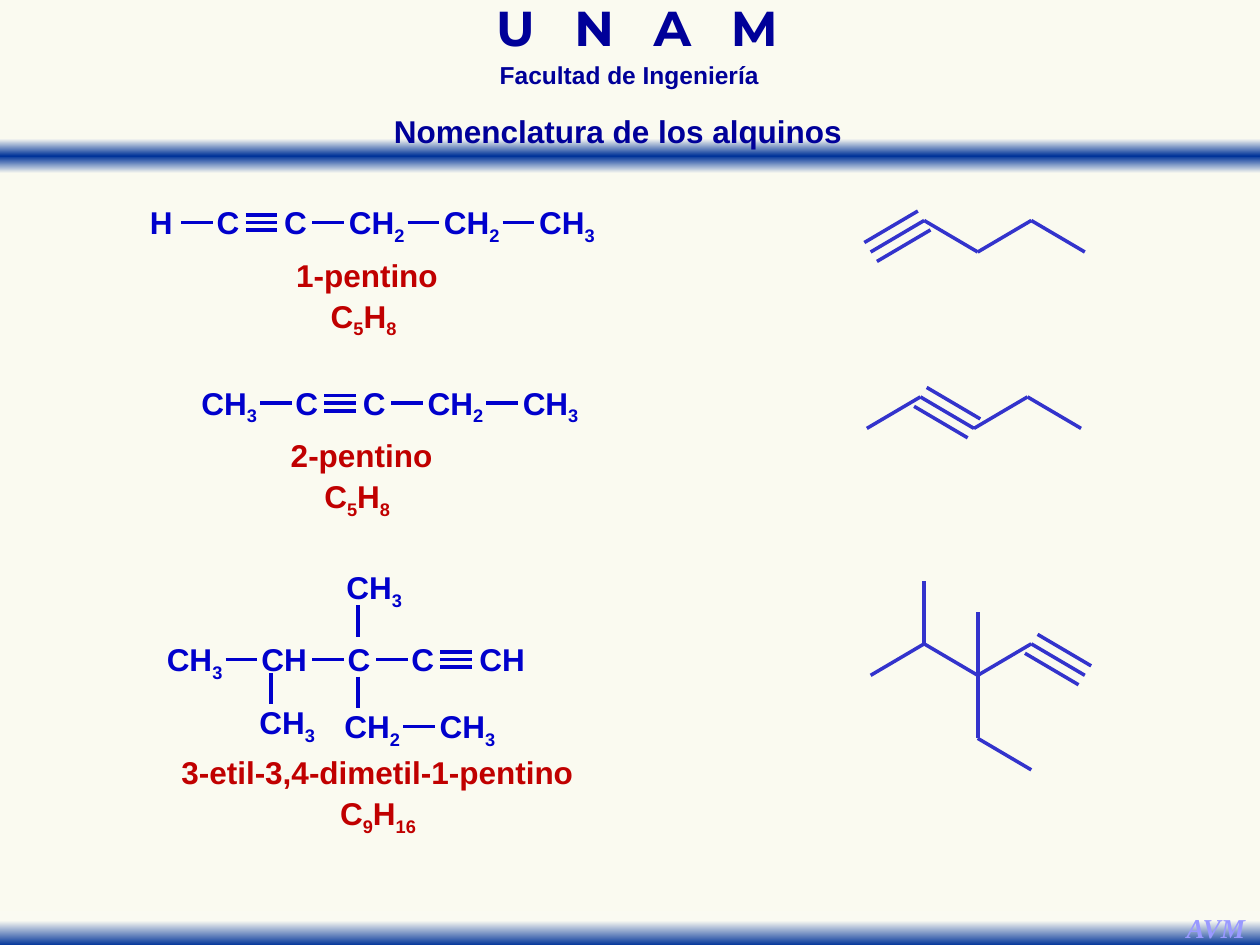
from itertools import groupby

from lxml import etree
from pptx import Presentation
from pptx import util as u
from pptx.dml.color import RGBColor
from pptx.enum import shapes, text
from pptx.oxml.ns import qn

CELL = 0.25
COLUMNS, ROWS = 40, 30
CREAM, BAND, NAVY, RED, BLUE, VIOLET, LILAC = (
    "FAFAF2", "003399", "000099", "C00000", "0000CC", "3333CC", "9999FF")
ATOM_WIDTH = {"H": 1.52, "C": 1.52, "CH": 2.28, "CH2": 2.64, "CH3": 2.64}
ATOM_PITCH = {"H": 2.12, "C": 2.02, "CH": 2.76, "CH2": 3.02, "CH3": 3.02}
TRIPLE_PITCH = 2.14
ZIGZAG = 1.7


def colour(value):
    """Turn a hex string into a colour."""
    return RGBColor.from_string(value)


def cells(*counts):
    """Turn grid counts into lengths."""
    return [u.Inches(count * CELL) for count in counts]


def write(box, words, formula=False, wrap=False, leading=None, tracking=None, **look):
    """Fill a box with one centred paragraph, lowering digits in a formula."""
    frame = box.text_frame
    settings = {"word_wrap": wrap, "vertical_anchor": text.MSO_ANCHOR.TOP,
                "auto_size": text.MSO_AUTO_SIZE.NONE,
                "margin_left": u.Inches(0.1), "margin_right": u.Inches(0.1),
                "margin_top": u.Inches(0.05), "margin_bottom": u.Inches(0.05)}
    for name, value in settings.items():
        setattr(frame, name, value)
    para = frame.paragraphs[0]
    para.alignment = text.PP_ALIGN.CENTER
    para.space_before = u.Pt(0)
    para.line_spacing = leading
    shade = look.pop("shade")
    font = {"name": "Arial", "size": u.Pt(18), "bold": True, **look}
    parts = groupby(words, str.isdigit) if formula else [(False, words)]
    for lowered, letters in parts:
        span = para.add_run()
        span.text = "".join(letters)
        for name, value in font.items():
            setattr(span.font, name, value)
        span.font.color.rgb = colour(shade)
        properties = span.font._element
        if lowered:
            properties.set("baseline", "-25000")
        if tracking:
            properties.set("spc", str(tracking))


def label(page, box, words, **look):
    """Place a line of text in a grid box."""
    write(page.shapes.add_textbox(*cells(*box)), words, **look)


def bond(page, start, end, shade):
    """Draw one bond between two grid points."""
    line = page.shapes.add_connector(
        shapes.MSO_CONNECTOR.STRAIGHT, *cells(*start, *end))
    line.line.color.rgb = colour(shade)
    line.line.width = u.Pt(2)
    etree.SubElement(line._element.spPr, qn("a:effectLst"))


def band(page, top, stops):
    """Draw a full-width strip with a vertical gradient."""
    strip = page.shapes.add_shape(
        shapes.MSO_SHAPE.RECTANGLE, *cells(0, top, COLUMNS, 1.1))
    strip.shadow.inherit = False
    strip.line.fill.background()
    strip.fill.gradient()
    strip.fill.gradient_angle = 270
    stop_list = strip._element.spPr.find(".//" + qn("a:gsLst"))
    for old in list(stop_list):
        stop_list.remove(old)
    for position, shade in stops:
        stop = etree.SubElement(stop_list, qn("a:gs"), pos=str(position * 1000))
        etree.SubElement(stop, qn("a:srgbClr"), val=shade)


def frame_page(page):
    """Place the header, the strips, the signature and the title."""
    page.background.fill.solid()
    page.background.fill.fore_color.rgb = colour("FAFAF0")
    band(page, 4.4, [(0, CREAM), (50, BAND), (100, CREAM)])
    band(page, 28.92, [(28, CREAM), (100, BAND)])
    label(page, (12.4, 0.24, 15.64, 1.72), "U N A M", name="Montserrat",
          size=u.Pt(28), shade=NAVY, leading=0.7, tracking=740, wrap=True)
    label(page, (12.84, 1.96, 14.28, 1.08), "Facultad de Ingeniería",
          size=u.Pt(14), shade=NAVY, leading=0.7, wrap=True)
    label(page, (37.24, 28.72, 2.72, 1.48), "AVM", name="Times New Roman",
          size=u.Pt(15.6), italic=True, shade=LILAC)
    title = page.shapes.title
    title.left, title.top, title.width, title.height = cells(11.76, 3.36, 15.72, 1.6)
    write(title, "Nomenclatura de los alquinos", shade=NAVY)
    page.shapes._spTree.append(title._element)


def chain(page, left, top, atoms):
    """Set a row of atoms joined by single or triple bonds."""
    middle = top + 0.82
    previous = None
    for link, atom in atoms:
        if link:
            triple = link == "≡"
            left += TRIPLE_PITCH if triple else ATOM_PITCH[previous]
            start = left - (0.82 if triple else 0.72)
            for shift in (-0.24, 0, 0.24) if triple else (0,):
                bond(page, (start, middle + shift), (start + 1, middle + shift), BLUE)
        label(page, (left, top, ATOM_WIDTH[atom], 1.6), atom, formula=True, shade=BLUE)
        previous = atom


def skeleton(page, left, top, triple, branches=()):
    """Draw a five-carbon zigzag with one triple bond and its branches."""
    def place(column, row, shift=(0, 0)):
        return left + column * ZIGZAG + shift[0], top + row + shift[1]

    peaks = [(step, (step + 1) % 2) for step in range(5)]
    for start, end in [*zip(peaks, peaks[1:]), *branches]:
        bond(page, place(*start), place(*end), VIOLET)
    start, end = peaks[triple], peaks[triple + 1]
    across = 0.2 * (start[1] - end[1])
    for side in (-1, 1):
        shift = side * across, side * 0.3
        bond(page, place(*start, shift), place(*end, shift), VIOLET)


def caption(page, top, name, name_centre, formula, formula_centre):
    """Set a compound's name above its molecular formula."""
    label(page, (name_centre - 7.2, top, 14.4, 1.6), name, shade=RED)
    label(page, (formula_centre - 1.7, top + 1.3, 3.4, 1.6), formula,
          formula=True, shade=RED)


def main():
    """Build the deck."""
    deck = Presentation()
    deck.slide_width, deck.slide_height = cells(COLUMNS, ROWS)
    page = deck.slides.add_slide(deck.slide_layouts[5])
    frame_page(page)

    chain(page, 4.36, 6.24, [("", "H"), ("-", "C"), ("≡", "C"), ("-", "CH2"),
                             ("-", "CH2"), ("-", "CH3")])
    caption(page, 7.92, "1-pentino", 11.65, "C5H8", 11.54)
    skeleton(page, 27.64, 7, 0)

    chain(page, 5.96, 11.98, [("", "CH3"), ("-", "C"), ("≡", "C"), ("-", "CH2"),
                              ("-", "CH3")])
    caption(page, 13.64, "2-pentino", 11.48, "C5H8", 11.34)
    skeleton(page, 27.52, 12.6, 1)

    chain(page, 4.86, 20.12, [("", "CH3"), ("-", "CH"), ("-", "C"), ("-", "C"),
                              ("≡", "CH")])
    chain(page, 10.56, 17.84, [("", "CH3")])
    chain(page, 7.8, 22.12, [("", "CH3")])
    chain(page, 10.5, 22.24, [("", "CH2"), ("-", "CH3")])
    for column, row in [(11.36, 19.22), (11.36, 21.48), (8.6, 21.36)]:
        bond(page, (column, row), (column, row + 1), BLUE)
    caption(page, 23.72, "3-etil-3,4-dimetil-1-pentino", 11.98, "C9H16", 12)
    skeleton(page, 27.64, 20.44, 3, [((1, 0), (1, -2)), ((2, 1), (2, -1)),
                                     ((2, 1), (2, 3)), ((2, 3), (3, 4))])
    deck.save("out.pptx")


if __name__ == "__main__":
    main()
